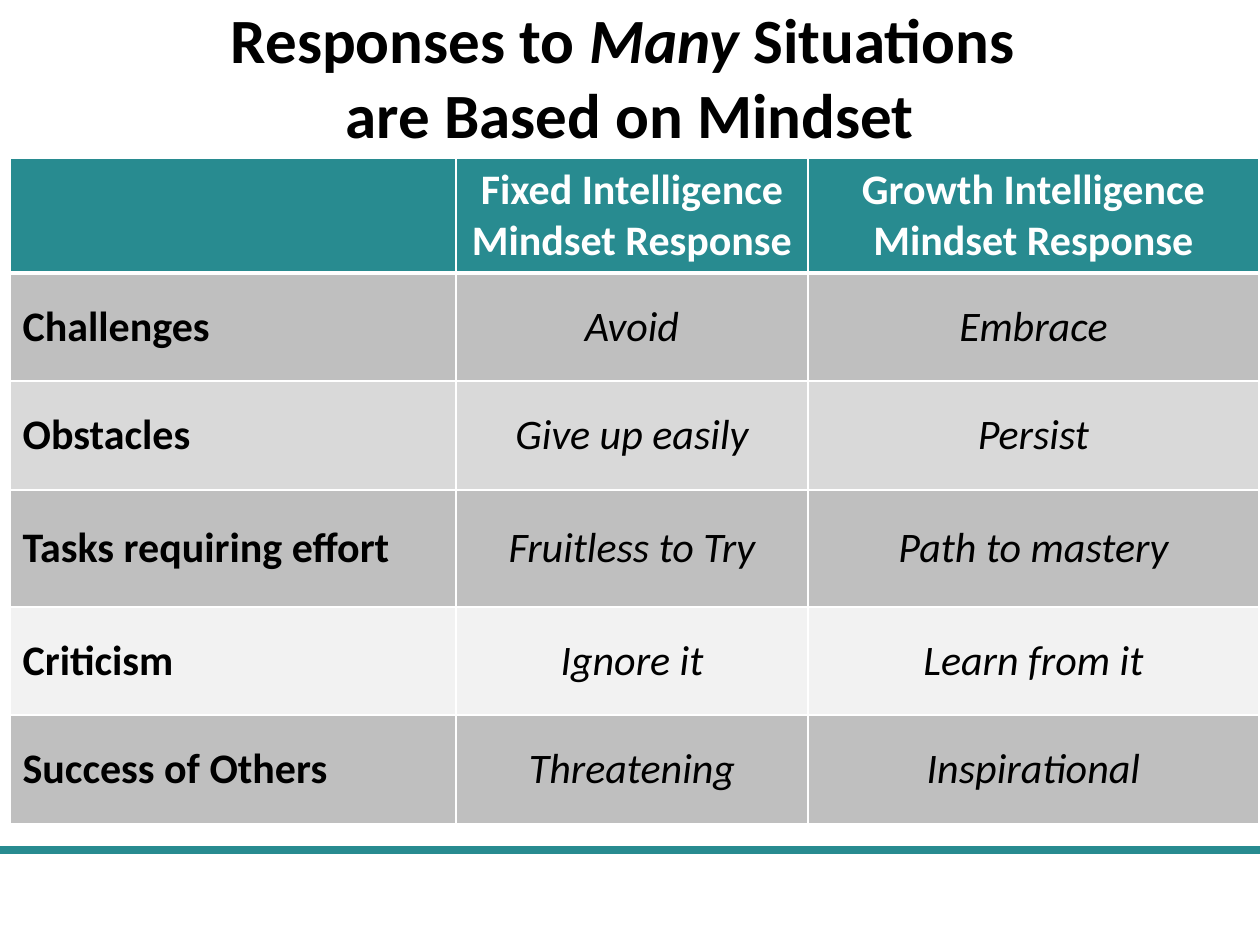
import pptx
import pptx.dml.color
import pptx.enum.shapes
import pptx.enum.text
import pptx.oxml
import pptx.oxml.ns
import pptx.util

ALIGN = pptx.enum.text.PP_ALIGN
ANCHOR = pptx.enum.text.MSO_ANCHOR
TEAL, WHITE, BLACK = "288B90", "FFFFFF", "000000"


def px(length):
    return pptx.util.Emu(round(length * 914400 / 126))


def color(value):
    return pptx.dml.color.RGBColor.from_string(value)


class MindsetSlide:
    font_name = "Calibri"
    title_size = 36
    table_size = 24

    def __init__(self, presentation):
        self.slide = presentation.slides.add_slide(presentation.slide_layouts[5])

    def style(self, run, size, ink, bold=False, italic=False):
        run.font.name = self.font_name
        run.font.size = pptx.util.Pt(size)
        run.font.color.rgb = color(ink)
        run.font.bold = bold
        run.font.italic = italic

    def title(self, pieces, left, top, width, height, bottom_inset):
        heading = self.slide.shapes.title
        heading.left, heading.top = px(left), px(top)
        heading.width, heading.height = px(width), px(height)
        frame = heading.text_frame
        frame.auto_size = pptx.enum.text.MSO_AUTO_SIZE.NONE
        frame.word_wrap = True
        frame.vertical_anchor = ANCHOR.MIDDLE
        frame.margin_bottom = px(bottom_inset)
        paragraph = frame.paragraphs[0]
        paragraph.alignment = ALIGN.CENTER
        for text, italic in pieces:
            if text == "\n":
                paragraph.add_line_break()
                continue
            run = paragraph.add_run()
            run.text = text
            self.style(run, self.title_size, BLACK, True, italic)

    def rule(self, left, right, y, ink, weight):
        footer_rule = self.slide.shapes.add_connector(
            pptx.enum.shapes.MSO_CONNECTOR.STRAIGHT, px(left), px(y), px(right), px(y))
        footer_rule.line.color.rgb = color(ink)
        footer_rule.line.width = pptx.util.Pt(weight)
        properties = footer_rule._element.spPr
        properties.append(pptx.oxml.parse_xml(
            f"<a:effectLst {pptx.oxml.ns.nsdecls('a')}/>"))

    def borders(self, cell, top, bottom):
        properties = cell._tc.get_or_add_tcPr()
        for side, weight in {"L": 1, "R": 1, "T": top, "B": bottom}.items():
            properties.append(pptx.oxml.parse_xml(
                f"<a:ln{side} {pptx.oxml.ns.nsdecls('a')} w='{pptx.util.Pt(weight)}'>"
                f"<a:solidFill><a:srgbClr val='{WHITE}'/></a:solidFill></a:ln{side}>"))

    def table(self, rows, fills, left, top, widths, heights):
        responses = self.slide.shapes.add_table(
            len(rows), len(widths), px(left), px(top),
            px(sum(widths)), px(sum(heights))).table
        responses.horz_banding = False
        for column, width in zip(responses.columns, widths):
            column.width = px(width)
        for r, (texts, fill, height) in enumerate(zip(rows, fills, heights)):
            responses.rows[r].height = px(height)
            header = r == 0
            for c, text in enumerate(texts):
                cell = responses.cell(r, c)
                self.borders(cell, 3 if r == 1 else 1, 3 if header else 1)
                cell.fill.solid()
                cell.fill.fore_color.rgb = color(fill)
                cell.vertical_anchor = ANCHOR.TOP if header else ANCHOR.MIDDLE
                paragraph = cell.text_frame.paragraphs[0]
                paragraph.text = text
                paragraph.alignment = ALIGN.CENTER if c else ALIGN.LEFT
                for run in paragraph.runs:
                    self.style(run, self.table_size, WHITE if header else BLACK,
                               bold=header or c == 0, italic=not header and c > 0)


def main():
    presentation = pptx.Presentation()
    presentation.slide_width, presentation.slide_height = px(1260), px(945)
    mindset = MindsetSlide(presentation)

    mindset.title(
        [("Responses to ", False), ("Many", True), (" Situations ", False),
         ("\n", False), ("are Based on Mindset", False)],
        left=0, top=42, width=1260, height=136, bottom_inset=75)
    mindset.rule(0, 1260, 850, TEAL, 5)

    responses = [
        ("", "Fixed Intelligence Mindset Response", "Growth Intelligence Mindset Response"),
        ("Challenges", "Avoid", "Embrace"),
        ("Obstacles", "Give up easily", "Persist"),
        ("Tasks requiring effort", "Fruitless to Try", "Path to mastery"),
        ("Criticism", "Ignore it", "Learn from it"),
        ("Success of Others", "Threatening", "Inspirational"),
    ]
    row_fills = [TEAL, "BFBFBF", "D9D9D9", "BFBFBF", "F2F2F2", "BFBFBF"]
    mindset.table(responses, row_fills, left=10, top=158,
                  widths=[446, 352, 451], heights=[114, 108, 109, 117, 108, 109])

    presentation.save("out.pptx")


if __name__ == "__main__":
    main()
